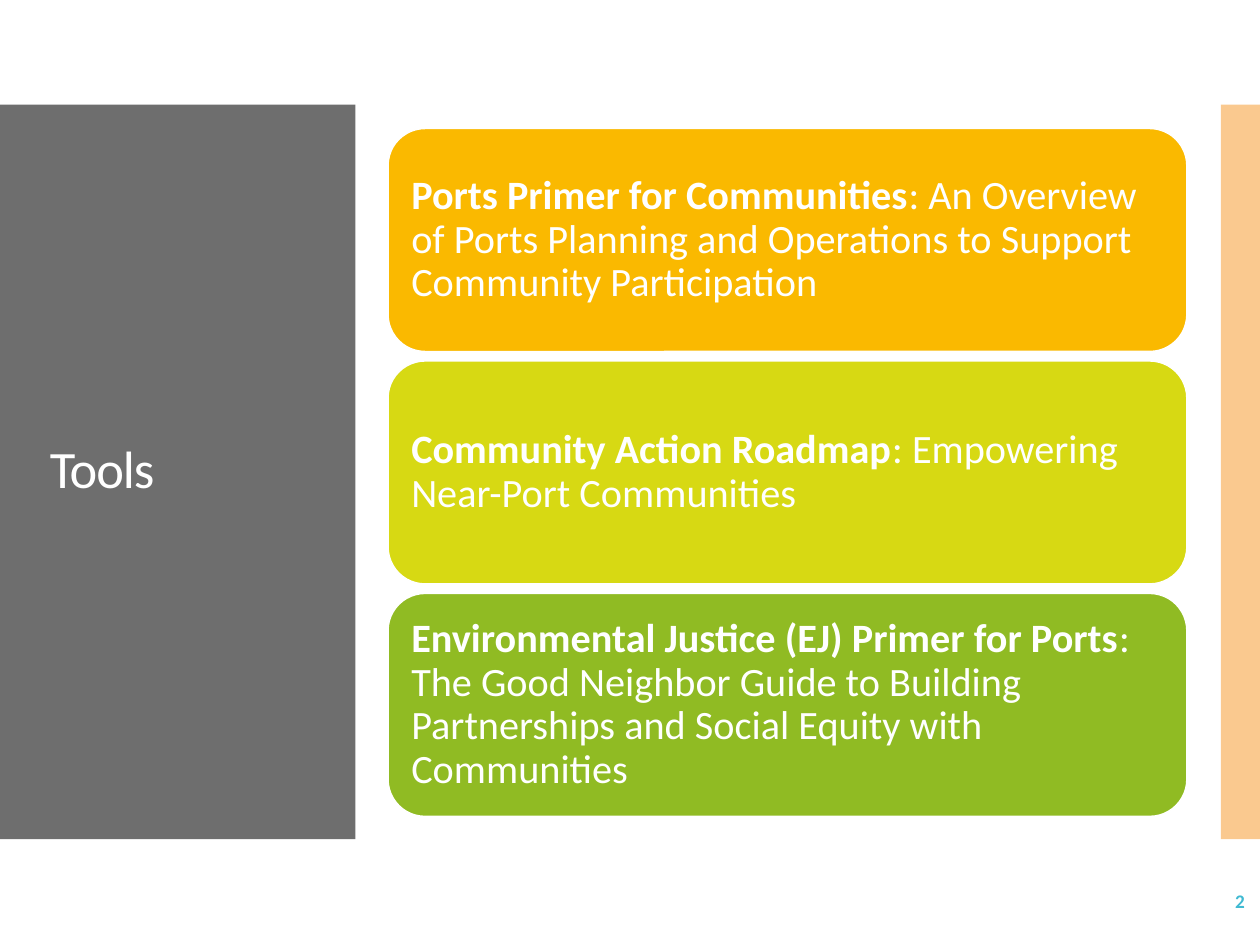
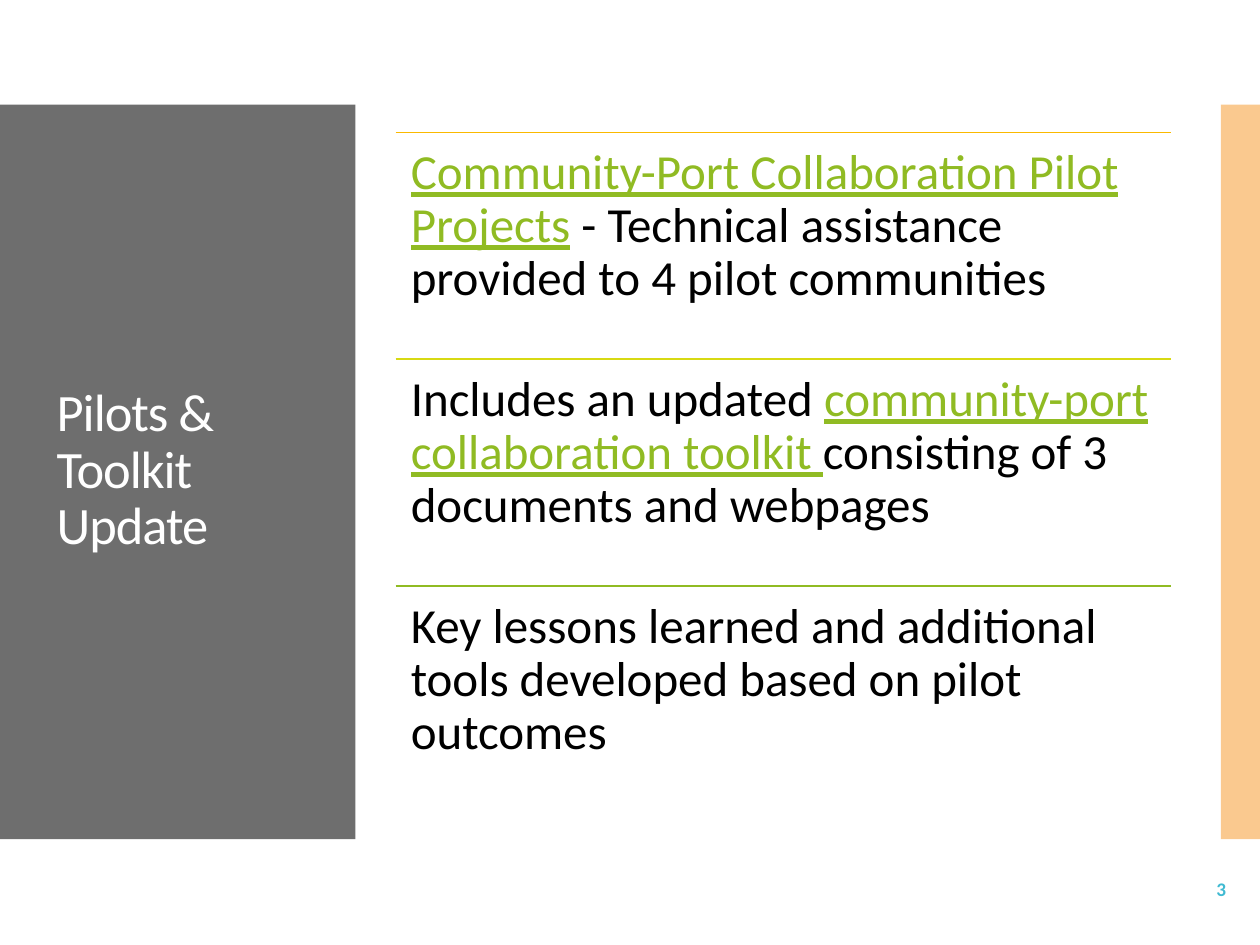
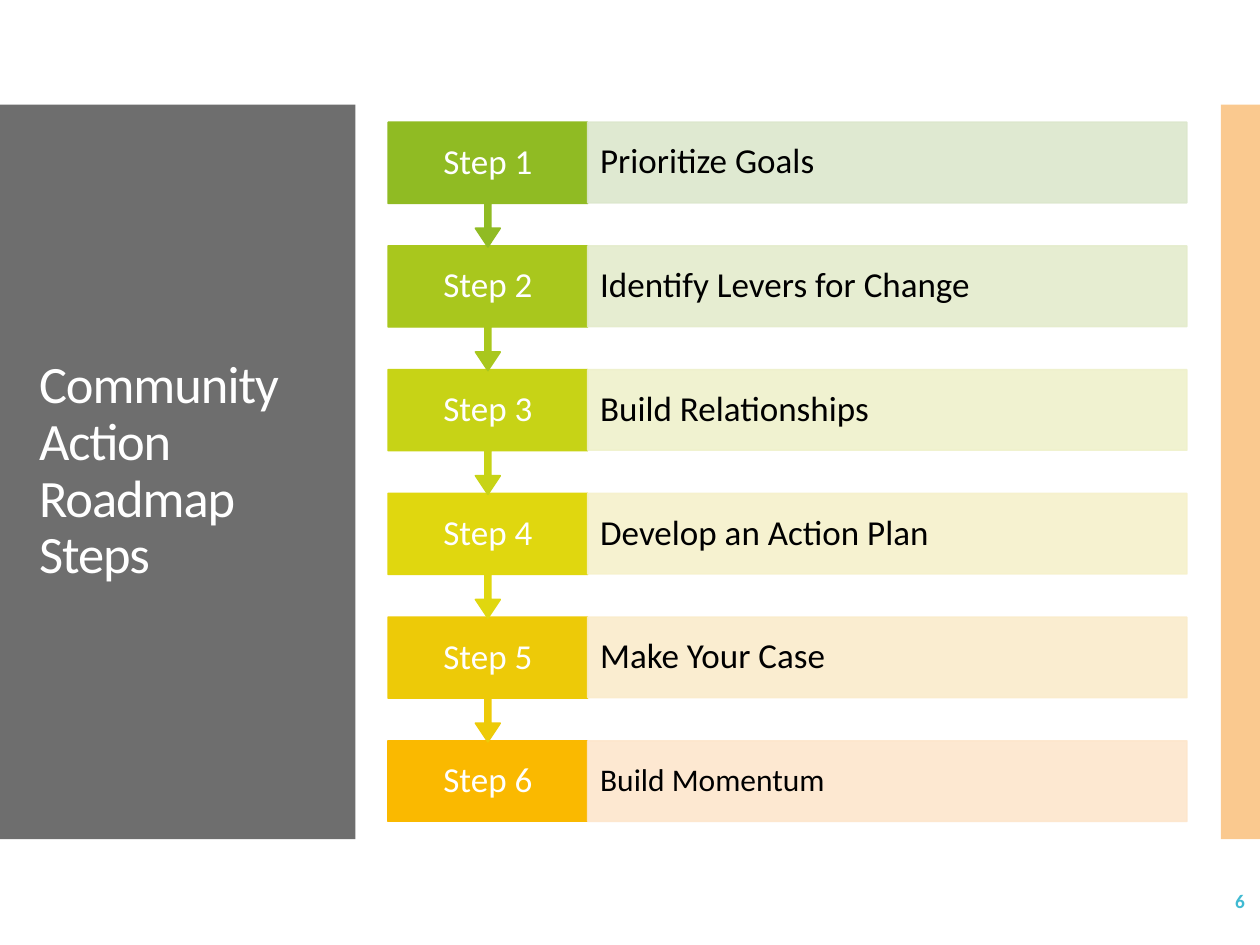
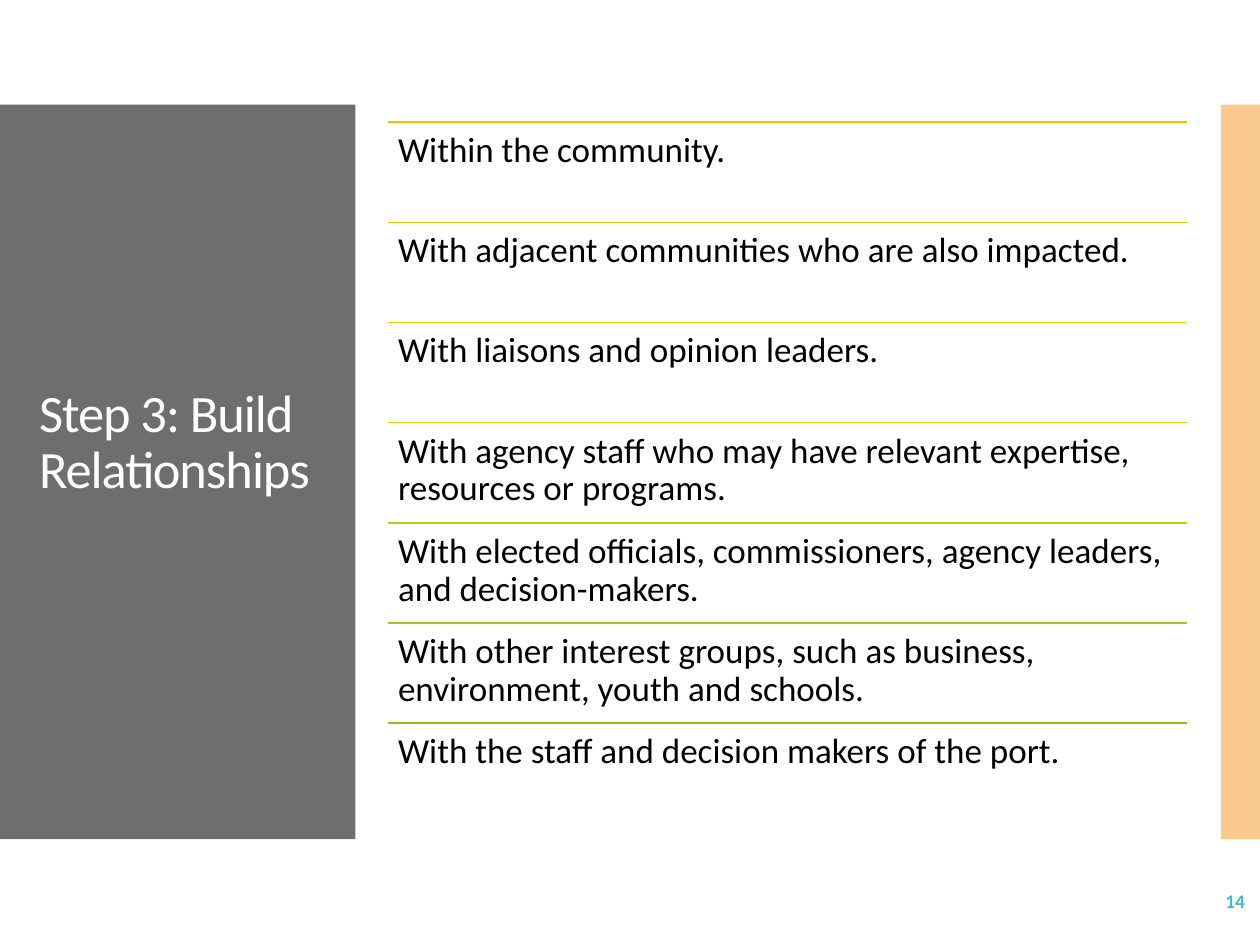
from lxml.etree import SubElement
from pptx import Presentation
from pptx.dml.color import RGBColor
from pptx.enum.shapes import MSO_CONNECTOR, MSO_SHAPE
from pptx.enum.text import MSO_ANCHOR, MSO_AUTO_SIZE, PP_ALIGN
from pptx.oxml.ns import qn
from pptx.util import Inches, Pt

WHITE = RGBColor(0xFF, 0xFF, 0xFF)
BLACK = RGBColor(0x00, 0x00, 0x00)
GREY = RGBColor(0x6E, 0x6E, 0x6E)
PEACH = RGBColor(0xF7, 0x94, 0x21)
TEAL = RGBColor(0x40, 0xBA, 0xD2)
AMBER = RGBColor(0xFA, 0xB9, 0x00)
LIME = RGBColor(0xD7, 0xD9, 0x13)
GREEN = RGBColor(0x90, 0xBB, 0x23)
THREE = [AMBER, LIME, GREEN]
SEVEN = [AMBER, RGBColor(0xEF, 0xC7, 0x06), RGBColor(0xE4, 0xD3, 0x0D), LIME,
         RGBColor(0xBC, 0xCF, 0x18), RGBColor(0xA5, 0xC5, 0x1E), GREEN]

WIDE, HIGH = 10, 7.5
FACE = "Calibri"
EDGE = 0.85
BANDS = [((0, 0.83, 2.82, 5.83), GREY, 100), ((9.69, 0.83, 0.32, 5.83), PEACH, 50)]
LEFT, SPAN = 3.08, 6.34

BOLD = {"bold": True}
LINK = {"underline": True, "color": GREEN}

TOOLS = [
    [("Ports Primer for Communities", BOLD),
     (": An Overview of Ports Planning and Operations to Support Community Participation  ", {})],
    [("Community Action Roadmap", BOLD), (": Empowering Near-Port Communities", {})],
    [("Environmental Justice (EJ) Primer for Ports", BOLD),
     (": The Good Neighbor Guide to Building Partnerships and Social Equity with Communities", {})],
]
PILOTS = [
    [("Community-Port Collaboration Pilot Projects", LINK),
     (" - Technical assistance provided to 4 pilot communities", {})],
    [("Includes an updated ", {}), ("community-port collaboration toolkit ", LINK),
     ("consisting of 3 documents and webpages", {})],
    [("Key lessons learned and additional tools developed based on pilot outcomes", {})],
]
STEPS = [
    ("Prioritize Goals ", 20, GREEN, RGBColor(0xDC, 0xE7, 0xCD)),
    ("Identify Levers for Change", 20, RGBColor(0xA9, 0xC7, 0x1D), RGBColor(0xE4, 0xEC, 0xCC)),
    ("Build Relationships", 20, RGBColor(0xC7, 0xD3, 0x16), RGBColor(0xEF, 0xF1, 0xCB)),
    ("Develop an Action Plan", 20, RGBColor(0xE0, 0xD7, 0x0F), RGBColor(0xF6, 0xF1, 0xCB)),
    ("Make Your Case", 20, RGBColor(0xED, 0xCA, 0x08), RGBColor(0xFA, 0xEC, 0xCB)),
    ("Build Momentum", 18, AMBER, RGBColor(0xFD, 0xE6, 0xCC)),
]
GROUPS = [[(text, {})] for text in (
    "Within the community.",
    "With adjacent communities who are also impacted.",
    "With liaisons and opinion leaders.",
    "With agency staff who may have relevant expertise, resources or programs.",
    "With elected officials, commissioners, agency leaders, and decision-makers.",
    "With other interest groups, such as business, environment, youth and schools.",
    "With the staff and decision makers of the port.",
)]


def place(shape, box):
    for name, size in zip(("left", "top", "width", "height"), box):
        setattr(shape, name, Inches(size))


def write(shape, runs, size, color, pad=(0.1, 0.1, 0.1, 0.1),
          anchor=MSO_ANCHOR.MIDDLE, align=PP_ALIGN.LEFT, pitch=0.9, track=None):
    frame = shape.text_frame
    form = {"word_wrap": True, "auto_size": MSO_AUTO_SIZE.NONE, "vertical_anchor": anchor}
    sides = ("margin_left", "margin_top", "margin_right", "margin_bottom")
    form.update((side, Inches(gap)) for side, gap in zip(sides, pad))
    for name, value in form.items():
        setattr(frame, name, value)
    para = frame.paragraphs[0]
    para.alignment, para.line_spacing = align, pitch
    for text, style in runs:
        run = para.add_run()
        run.text = text
        look = {"name": FACE, "size": Pt(size), "bold": False, "color": color, **style}
        run.font.color.rgb = look.pop("color")
        for name, value in look.items():
            setattr(run.font, name, value)
        if track:
            run.font._element.set("spc", str(track))


def block(slide, kind, box, fill, line=None, clear=100):
    shape = slide.shapes.add_shape(kind, *map(Inches, box))
    shape.shadow.inherit = False
    shape.fill.solid()
    shape.fill.fore_color.rgb = fill
    if line is None:
        shape.line.fill.background()
    else:
        shape.line.color.rgb = line
        shape.line.width = Pt(EDGE)
    if clear < 100:
        for tint in shape.element.spPr.iter(qn("a:srgbClr")):
            SubElement(tint, qn("a:alpha")).set("val", str(clear * 1000))
    return shape


def rule(slide, left, top, span, color):
    line = slide.shapes.add_connector(
        MSO_CONNECTOR.STRAIGHT, *map(Inches, (left, top, left + span, top)))
    line.line.color.rgb = color
    line.line.width = Pt(EDGE)
    SubElement(line.element.spPr, qn("a:effectLst"))


def dress(layout, slide):
    for item in list(layout.placeholders)[1:]:
        item.element.getparent().remove(item.element)
    for box, fill, clear in BANDS:
        band = block(slide, MSO_SHAPE.RECTANGLE, box, fill, clear=clear)
        layout.shapes.element.append(band.element)


def start(deck, title, page, box=(0.21, 1.23, 2.42, 5.03),
          foot=(8.72, 6.95, 1.26, 0.4), base=0.05):
    layout = deck.slide_layouts[5]
    slide = deck.slides.add_slide(layout)
    if len(deck.slides) == 1:
        dress(layout, slide)
    place(slide.shapes.title, box)
    write(slide.shapes.title, [(title, {})], 30, WHITE, (0.1, 0.05, 0.1, base), track=-60)
    mark = slide.shapes.add_textbox(*map(Inches, foot))
    write(mark, [(str(page), BOLD)], 11, TEAL, (0.1, 0.05, 0.1, 0.05),
          align=PP_ALIGN.RIGHT, pitch=1)
    return slide


def cards(slide, items, top=1.02, pitch=1.845, high=1.77):
    for row, (runs, fill) in enumerate(zip(items, THREE)):
        box = (LEFT, top + row * pitch, SPAN, high)
        card = block(slide, MSO_SHAPE.ROUNDED_RECTANGLE, box, fill, WHITE)
        write(card, runs, 23, WHITE)


def rows(slide, items, tints, left, top, span, pitch, size, pad):
    for row, (runs, tint) in enumerate(zip(items, tints)):
        y = top + row * pitch
        rule(slide, left, y, span, tint)
        text = slide.shapes.add_textbox(*map(Inches, (left, y, span, pitch)))
        write(text, runs, size, BLACK, (pad,) * 4, MSO_ANCHOR.TOP)


def flow(slide, top=0.97, pitch=0.982, high=0.64, lead=0.99):
    tag = SPAN / 4
    last = len(STEPS) - 1
    for row in range(last, -1, -1):
        text, size, fill, tint = STEPS[row]
        y = top + row * pitch
        if row == last:
            step = block(slide, MSO_SHAPE.RECTANGLE, (LEFT, y, tag, high), fill, fill)
        else:
            step = block(slide, MSO_SHAPE.DOWN_ARROW_CALLOUT, (LEFT, y, tag, lead), fill, fill)
            for spot, share in enumerate((0.05, 0.1, 0.15, 0.65)):
                step.adjustments[spot] = share
        write(step, [(f"Step {row + 1}", {})], 20, WHITE, align=PP_ALIGN.CENTER)
        bar = block(slide, MSO_SHAPE.RECTANGLE, (LEFT + tag, y, SPAN - tag, high), tint, tint, 90)
        write(bar, [(text, {})], size, BLACK)


def main():
    deck = Presentation()
    deck.slide_width, deck.slide_height = Inches(WIDE), Inches(HIGH)
    cards(start(deck, " Tools", 2), TOOLS)
    slide = start(deck, "Pilots & Toolkit Update", 3, (0.35, 1.3, 2.35, 4.88),
                  (8.61, 6.86, 1.22, 0.39))
    rows(slide, PILOTS, THREE, 3.14, 1.05, 6.15, 1.8, 28, 0.12)
    flow(start(deck, "Community Action Roadmap Steps", 6))
    slide = start(deck, "Step 3: Build Relationships", 14, base=0.5)
    rows(slide, GROUPS, SEVEN, LEFT, 0.97, SPAN, 0.795, 20, 0.08)
    deck.save("out.pptx")


if __name__ == "__main__":
    main()
